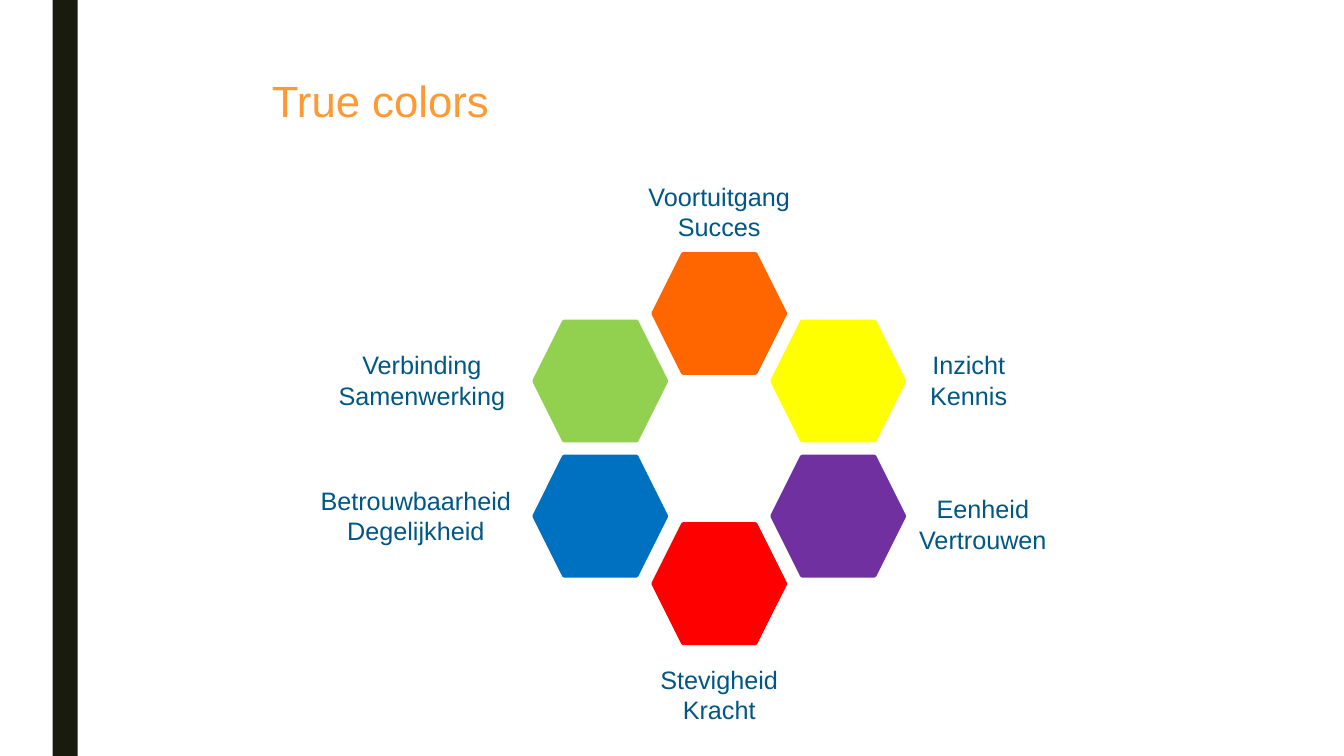
from dataclasses import dataclass

from pptx import Presentation
from pptx.dml.color import RGBColor
from pptx.enum.shapes import MSO_SHAPE
from pptx.enum.text import MSO_ANCHOR, PP_ALIGN
from pptx.util import Pt


@dataclass(frozen=True)
class Theme:
    font: str = "Arial"
    title_size: float = 31.2
    label_size: float = 18
    outline: float = 2.75
    bar: str = "191B0E"
    title: str = "FF9933"
    label: str = "005684"
    orange: str = "FF6600"
    yellow: str = "FFFF00"
    purple: str = "7030A0"
    red: str = "FF0000"
    blue: str = "0070C0"
    green: str = "92D050"


@dataclass(frozen=True)
class Box:
    left: float
    top: float
    width: float
    height: float

    def lengths(self):
        return [Pt(value) for value in (self.left, self.top, self.width, self.height)]

    def centered(self, across, down, width, height):
        return Box(
            self.left + self.width / 2 + across - width / 2,
            self.top + self.height / 2 + down - height / 2,
            width,
            height,
        )


THEME = Theme()
PAGE = Box(0, 0, 960, 540)
BAR = Box(37.5, 0, 18, 540)
TITLE = Box(187.2, 54, 350.6, 59)
RING = Box(381.6, 181.4, 264.3, 278)
HEXAGON = (94.3, 85)
COLUMN_STEP = 85
ROW_STEP = 48.25
LABEL_HEIGHT = 51

VALUES = [
    (THEME.orange, 0, -2, ("Voortuitgang", "Succes"), 0, -72.4, 130),
    (THEME.yellow, 1, -1, ("Inzicht", "Kennis"), 93.2, -0.5, 130),
    (THEME.purple, 1, 1, ("Eenheid", "Vertrouwen"), 103.3, 6, 130),
    (THEME.red, 0, 2, ("Stevigheid", "Kracht"), 0, 79.5, 130),
    (THEME.blue, -1, 1, ("Betrouwbaarheid", "Degelijkheid"), -131.7, 0, 158),
    (THEME.green, -1, -1, ("Verbinding", "Samenwerking"), -127.4, -0.5, 149),
]


def apply(target, formats):
    for name, value in formats.items():
        setattr(target, name, value)


def add_filled(page, box, kind, color, outline=0):
    shape = page.shapes.add_shape(kind, *box.lengths())
    shape.shadow.inherit = False
    shape.fill.solid()
    shape.fill.fore_color.rgb = RGBColor.from_string(color)
    if outline:
        shape.line.color.rgb = RGBColor.from_string(color)
        shape.line.width = Pt(outline)
    else:
        shape.line.fill.background()


def add_text(page, box, lines, size, color, para_formats):
    frame = page.shapes.add_textbox(*box.lengths()).text_frame
    apply(frame, {"word_wrap": True, "vertical_anchor": MSO_ANCHOR.TOP})
    for index, line in enumerate(lines):
        para = frame.add_paragraph() if index else frame.paragraphs[0]
        apply(para, para_formats)
        span = para.add_run()
        span.text = line
        apply(span.font, {"name": THEME.font, "size": Pt(size)})
        span.font.color.rgb = RGBColor.from_string(color)


def add_bar(page, box):
    add_filled(page, box, MSO_SHAPE.RECTANGLE, THEME.bar)


def add_title(page, box):
    formats = {"alignment": PP_ALIGN.LEFT, "line_spacing": 0.89}
    add_text(page, box, ["True colors"], THEME.title_size, THEME.title, formats)


def add_ring(page, box):
    for color, column, row, lines, across, down, width in VALUES:
        hexagon = box.centered(column * COLUMN_STEP, row * ROW_STEP, *HEXAGON)
        add_filled(page, hexagon, MSO_SHAPE.HEXAGON, color, THEME.outline)
        label = hexagon.centered(across, down, width, LABEL_HEIGHT)
        formats = {"alignment": PP_ALIGN.CENTER}
        add_text(page, label, lines, THEME.label_size, THEME.label, formats)


def main():
    deck = Presentation()
    apply(deck, {"slide_width": Pt(PAGE.width), "slide_height": Pt(PAGE.height)})
    page = deck.slides.add_slide(deck.slide_layouts[6])
    add_bar(page, BAR)
    add_title(page, TITLE)
    add_ring(page, RING)
    deck.save("out.pptx")


if __name__ == "__main__":
    main()
